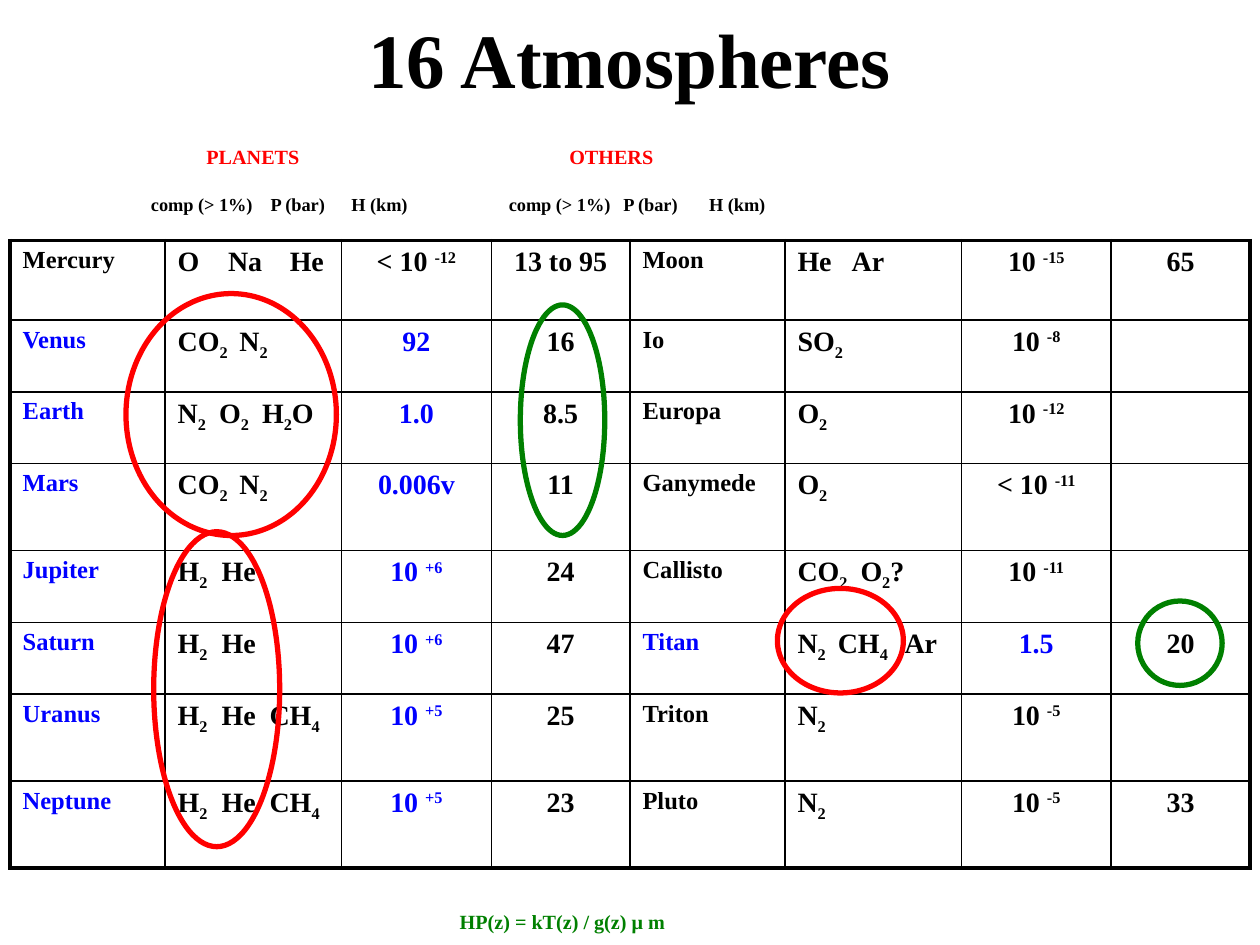
import pptx
import pptx.dml.color
import pptx.enum.shapes
import pptx.enum.text
import pptx.oxml.ns
import pptx.util
from lxml import etree

Inches, Pt = pptx.util.Inches, pptx.util.Pt
ALIGN, ANCHOR = pptx.enum.text.PP_ALIGN, pptx.enum.text.MSO_ANCHOR
COLORS = {"black": "000000", "blue": "0000FF", "red": "FF0000", "green": "008000"}

COL_WIDTHS = [1.23, 1.4, 1.19, 1.1] * 2
ROW_HEIGHTS = [0.63, 0.57, 0.57, 0.69, 0.57, 0.57, 0.69, 0.69]

# Name, gases, pressure, scale height; "|" switches between normal and shifted text
PLANETS = [
    ("Mercury", "O\tNa\tHe", "< 10 |-12", "13 to 95"),
    ("Venus", "CO|2|\tN|2", "92", "16"),
    ("Earth", "N|2|\tO|2|\tH|2|O", "1.0", "8.5"),
    ("Mars", "CO|2|\tN|2", "0.006v", "11"),
    ("Jupiter", "H|2|\tHe", "10 |+6", "24"),
    ("Saturn", "H|2|\tHe", "10 |+6", "47"),
    ("Uranus", "H|2|\tHe\tCH|4", "10 |+5", "25"),
    ("Neptune", "H|2|\tHe\tCH|4", "10 |+5", "23"),
]
OTHERS = [
    ("Moon", "He\tAr", "10 |-15", "65"),
    ("Io", "SO|2", "10 |-8", ""),
    ("Europa", "O|2", "10 |-12", ""),
    ("Ganymede", "O|2", "< 10 |-11", ""),
    ("Callisto", "CO|2|\tO|2|?", "10 |-11", ""),
    ("Titan", "N|2|\tCH|4|\tAr", "1.5", "20"),
    ("Triton", "N|2", "10 |-5", ""),
    ("Pluto", "N|2", "10 |-5", "33"),
]
BLUE_BODIES = {"Venus", "Earth", "Mars", "Jupiter", "Saturn", "Uranus", "Neptune", "Titan"}
GAS_TABS = {
    "O\tNa\tHe": (0.4, 0.89),
    "CO|2|\tN|2": (0.49,),
    "N|2|\tO|2|\tH|2|O": (0.33, 0.67),
    "H|2|\tHe": (0.35,),
    "H|2|\tHe\tCH|4": (0.35, 0.73),
    "He\tAr": (0.43,),
    "CO|2|\tO|2|?": (0.5,),
    "N|2|\tCH|4|\tAr": (0.32, 0.85),
}
RINGS = [
    (1, 2.33, 1.67, 1.92, "red"),
    (9.03, 4.77, 0.67, 0.67, "green"),
    (4.13, 2.42, 0.67, 1.83, "green"),
    (1.22, 4.22, 1, 2.5, "red"),
    (6.17, 4.67, 1, 0.83, "red"),
]


def rgb(color):
    return pptx.dml.color.RGBColor.from_string(COLORS[color])


def add_element(parent, tag, **attributes):
    return etree.SubElement(parent, pptx.oxml.ns.qn(tag), **attributes)


class SlideBuilder:
    font_name = "Times New Roman"

    def __init__(self, prs):
        self.s = prs.slides.add_slide(prs.slide_layouts[5])

    def style(self, font, size, color="black"):
        font.name, font.size, font.bold = self.font_name, Pt(size), True
        font.color.rgb = rgb(color)

    def paragraph(self, p, text, size, color="black", tabs=(), shift=0):
        """Write text, shifting every second "|" part by the given percentage."""
        if tabs:
            stops = add_element(p._p.get_or_add_pPr(), "a:tabLst")
            for position in tabs:
                add_element(stops, "a:tab", pos=str(Inches(position)), algn="l")
        for i, part in enumerate(text.split("|")):
            r = p.add_run()
            r.text = part
            self.style(r.font, size, color)
            if i % 2:
                r.font._element.set("baseline", str(shift * 1000))

    def title(self, text, left, top, width, height):
        sp = self.s.shapes.title
        sp.left, sp.top, sp.width, sp.height = map(Inches, (left, top, width, height))
        tf = sp.text_frame
        tf.text = text
        tf.vertical_anchor = ANCHOR.MIDDLE
        p = tf.paragraphs[0]
        p.alignment = ALIGN.CENTER
        self.style(p.runs[0].font, 44)

    def text(self, left, top, width, height, lines):
        """Add a text box; each line is (text, size, color, tabs)."""
        box = self.s.shapes.add_textbox(*map(Inches, (left, top, width, height)))
        tf = box.text_frame
        tf.word_wrap = True
        for i, line in enumerate(lines):
            p = tf.add_paragraph() if i else tf.paragraphs[0]
            self.paragraph(p, *line)
            if i:
                p.space_before = Pt(14)

    def borders(self, cell, outer):
        """Draw black cell edges, thicker on the outer sides."""
        tc_pr = cell._tc.get_or_add_tcPr()
        for side in "LRTB":
            width = Pt(2.25 if side in outer else 1)
            ln = add_element(tc_pr, "a:ln" + side, w=str(width))
            fill = add_element(ln, "a:solidFill")
            add_element(fill, "a:srgbClr", val=COLORS["black"])

    def table(self, left, top, rows):
        size = (sum(COL_WIDTHS), sum(ROW_HEIGHTS))
        frame = self.s.shapes.add_table(len(rows), len(COL_WIDTHS),
                                        *map(Inches, (left, top, *size)))
        table = frame.table
        table.first_row = table.horz_banding = False
        for column, width in zip(table.columns, COL_WIDTHS):
            column.width = Inches(width)
        last_row, last_col = len(ROW_HEIGHTS) - 1, len(COL_WIDTHS) - 1
        for i, row in enumerate(rows):
            table.rows[i].height = Inches(ROW_HEIGHTS[i])
            for j, text in enumerate(row):
                cell = table.cell(i, j)
                outer = {"L": j == 0, "R": j == last_col, "T": i == 0, "B": i == last_row}
                self.borders(cell, [side for side in outer if outer[side]])
                cell.fill.background()
                field = j % 4
                is_blue = row[j - field] in BLUE_BODIES and field in (0, 2)
                p = cell.text_frame.paragraphs[0]
                if field > 1:
                    p.alignment = ALIGN.CENTER
                if text:
                    self.paragraph(p, text, 16 if field else 14,
                                   "blue" if is_blue else "black",
                                   GAS_TABS.get(text, ()), -25 if field == 1 else 30)

    def ring(self, left, top, width, height, color):
        oval = pptx.enum.shapes.MSO_SHAPE.OVAL
        sp = self.s.shapes.add_shape(oval, *map(Inches, (left, top, width, height)))
        sp.shadow.inherit = False
        sp.fill.background()
        sp.line.color.rgb = rgb(color)
        sp.line.width = Pt(3)


def main():
    prs = pptx.Presentation()
    prs.slide_width, prs.slide_height = Inches(10), Inches(7.5)
    slide = SlideBuilder(prs)
    slide.title("16 Atmospheres", 0.75, 0, 8.5, 0.92)
    slide.table(0.08, 1.91, [a + b for a, b in zip(PLANETS, OTHERS)])
    units = "\tcomp (> 1%)\tP (bar)\tH (km)"
    slide.text(0.9, 1.1, 9.1, 0.64, [
        ("\tPLANETS\tOTHERS", 11.5, "red", (0.64, 3.52)),
        (units * 2, 10.5, "black", (0.2, 1.15, 1.79, 3.04, 3.95, 4.63)),
    ])
    slide.text(3.55, 7.17, 3, 0.28, [("HP(z) = kT(z) / g(z) μ m", 11.5, "green")])
    for ring in RINGS:
        slide.ring(*ring)
    prs.save("out.pptx")


if __name__ == "__main__":
    main()
